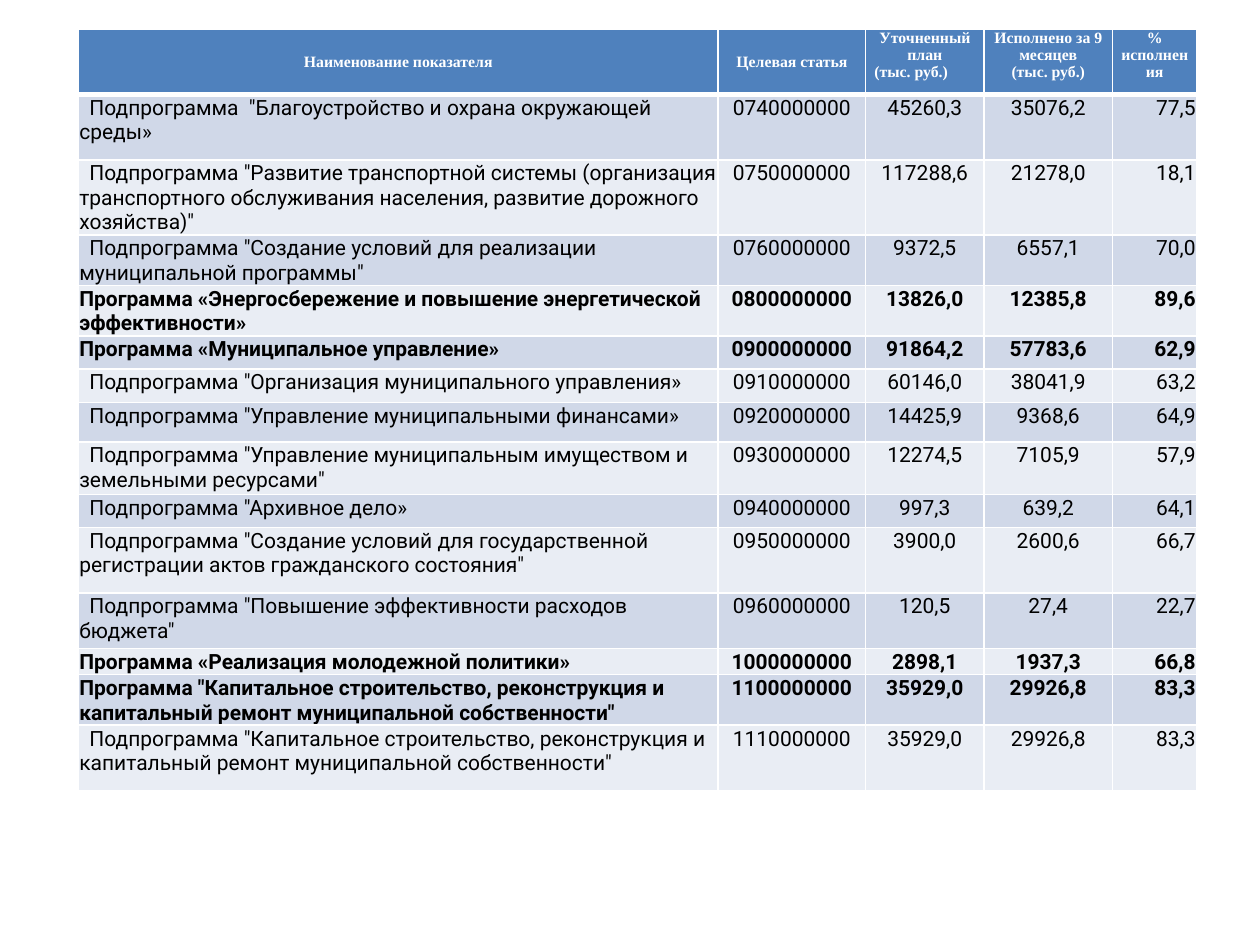
from lxml.etree import SubElement
from pptx import Presentation
from pptx.dml.color import RGBColor
from pptx.enum.text import MSO_ANCHOR, PP_ALIGN
from pptx.oxml.ns import qn
from pptx.util import Inches, Pt

WHITE = RGBColor(0xFF, 0xFF, 0xFF)
BLACK = RGBColor(0x00, 0x00, 0x00)
HEADER_BLUE = RGBColor(0x4F, 0x81, 0xBD)
BANDS = (RGBColor(0xD0, 0xD8, 0xE8), RGBColor(0xE9, 0xED, 0xF4))

COLUMN_WIDTHS = (5.08, 1.17, 0.94, 1.02, 0.67)
ROW_HEIGHTS = (0.52, 0.52, 0.36, 0.39, 0.39, 0.26, 0.27, 0.31,
               0.42, 0.26, 0.52, 0.44, 0.21, 0.39, 0.52)
LEFT, CENTER, RIGHT = PP_ALIGN.LEFT, PP_ALIGN.CENTER, PP_ALIGN.RIGHT
COLUMN_ALIGNMENTS = (LEFT, CENTER, CENTER, CENTER, RIGHT)

# Each heading: vertical anchor and its paragraphs with their alignment
HEADINGS = (
    (MSO_ANCHOR.MIDDLE, [("Наименование показателя", CENTER)]),
    (MSO_ANCHOR.MIDDLE, [("Целевая статья", CENTER)]),
    (MSO_ANCHOR.TOP, [("Уточненный план", CENTER), ("(тыс. руб.)", LEFT)]),
    (MSO_ANCHOR.TOP, [("Исполнено за 9 месяцев", CENTER), ("(тыс. руб.)", CENTER)]),
    (MSO_ANCHOR.TOP, [("% исполнения", CENTER)]),
)

BUDGET_ROWS = (
    ('Подпрограмма  "Благоустройство и охрана окружающей среды»',
     "0740000000", "45260,3", "35076,2", "77,5"),
    ('Подпрограмма "Развитие транспортной системы (организация транспортного '
     'обслуживания населения, развитие дорожного хозяйства)"',
     "0750000000", "117288,6", "21278,0", "18,1"),
    ('Подпрограмма "Создание условий для реализации муниципальной программы"',
     "0760000000", "9372,5", "6557,1", "70,0"),
    ("Программа «Энергосбережение и повышение энергетической эффективности»",
     "0800000000", "13826,0", "12385,8", "89,6"),
    ("Программа «Муниципальное управление»",
     "0900000000", "91864,2", "57783,6", "62,9"),
    ('Подпрограмма "Организация муниципального управления»',
     "0910000000", "60146,0", "38041,9", "63,2"),
    ('Подпрограмма "Управление муниципальными финансами»',
     "0920000000", "14425,9", "9368,6", "64,9"),
    ('Подпрограмма "Управление муниципальным имуществом и земельными ресурсами"',
     "0930000000", "12274,5", "7105,9", "57,9"),
    ('Подпрограмма "Архивное дело»',
     "0940000000", "997,3", "639,2", "64,1"),
    ('Подпрограмма "Создание условий для государственной регистрации актов '
     'гражданского состояния"',
     "0950000000", "3900,0", "2600,6", "66,7"),
    ('Подпрограмма "Повышение эффективности расходов бюджета"',
     "0960000000", "120,5", "27,4", "22,7"),
    ("Программа «Реализация молодежной политики»",
     "1000000000", "2898,1", "1937,3", "66,8"),
    ('Программа "Капитальное строительство, реконструкция и капитальный ремонт '
     'муниципальной собственности"',
     "1100000000", "35929,0", "29926,8", "83,3"),
    ('Подпрограмма "Капитальное строительство, реконструкция и капитальный ремонт '
     'муниципальной собственности"',
     "1110000000", "35929,0", "29926,8", "83,3"),
)


def set_borders(cell, top=1, bottom=1):
    """Draw white borders; widths are in points, the sides are always 1."""
    properties = cell._tc.get_or_add_tcPr()
    widths = {"a:lnL": 1, "a:lnR": 1, "a:lnT": top, "a:lnB": bottom}
    for position, (tag, width) in enumerate(widths.items()):
        line = SubElement(properties, qn(tag), w=str(Pt(width)))
        fill = SubElement(line, qn("a:solidFill"))
        SubElement(fill, qn("a:srgbClr"), val=str(WHITE))
        properties.insert(position, line)  # borders precede the fill


def style_cell(cell, color, side_margin, top_margin):
    cell.margin_left = cell.margin_right = Inches(side_margin)
    cell.margin_top, cell.margin_bottom = Inches(top_margin), 0
    cell.fill.solid()
    cell.fill.fore_color.rgb = color


def write_paragraph(paragraph, text, alignment, font, size, color, bold):
    paragraph.alignment = alignment
    span = paragraph.add_run()
    span.text = text
    span.font.name = font
    span.font.size = Pt(size)
    span.font.color.rgb = color
    span.font.bold = bold


def fill_heading(cell, anchor, lines):
    style_cell(cell, HEADER_BLUE, 0.07, 0)
    set_borders(cell, bottom=3)
    cell.vertical_anchor = anchor
    frame = cell.text_frame
    for index, (text, alignment) in enumerate(lines):
        paragraph = frame.add_paragraph() if index else frame.paragraphs[0]
        write_paragraph(paragraph, text, alignment, "Times New Roman", 9, WHITE, True)


def fill_budget_row(cells, values, color, top_border):
    """Programmes are bold; the names of subprogrammes are indented."""
    is_programme = values[0].startswith("Программа")
    for cell, text, alignment in zip(cells, values, COLUMN_ALIGNMENTS):
        style_cell(cell, color, 0.01, 0.01)
        set_borders(cell, top=top_border)
        write_paragraph(cell.text_frame.paragraphs[0], text, alignment,
                        "Roboto", 12, BLACK, is_programme)
    if not is_programme:
        name = cells[0].text_frame.paragraphs[0]._p.get_or_add_pPr()
        name.set("marL", "0")
        name.set("indent", str(Inches(0.08)))


def add_budget_table(page):
    frame = page.shapes.add_table(
        len(ROW_HEIGHTS), len(COLUMN_WIDTHS), Inches(0.62), Inches(0.23),
        Inches(sum(COLUMN_WIDTHS)), Inches(sum(ROW_HEIGHTS)))
    table = frame.table
    table.horz_banding = False
    for column, width in zip(table.columns, COLUMN_WIDTHS):
        column.width = Inches(width)
    for row, height in zip(table.rows, ROW_HEIGHTS):
        row.height = Inches(height)

    for column, (anchor, lines) in enumerate(HEADINGS):
        fill_heading(table.cell(0, column), anchor, lines)
    for index, values in enumerate(BUDGET_ROWS):
        cells = [table.cell(index + 1, column) for column in range(len(values))]
        fill_budget_row(cells, values, BANDS[index % 2], 1 if index else 3)


def main():
    deck = Presentation()
    deck.slide_width, deck.slide_height = Inches(10), Inches(7.5)
    page = deck.slides.add_slide(deck.slide_layouts[6])
    add_budget_table(page)
    deck.save("out.pptx")


if __name__ == "__main__":
    main()
